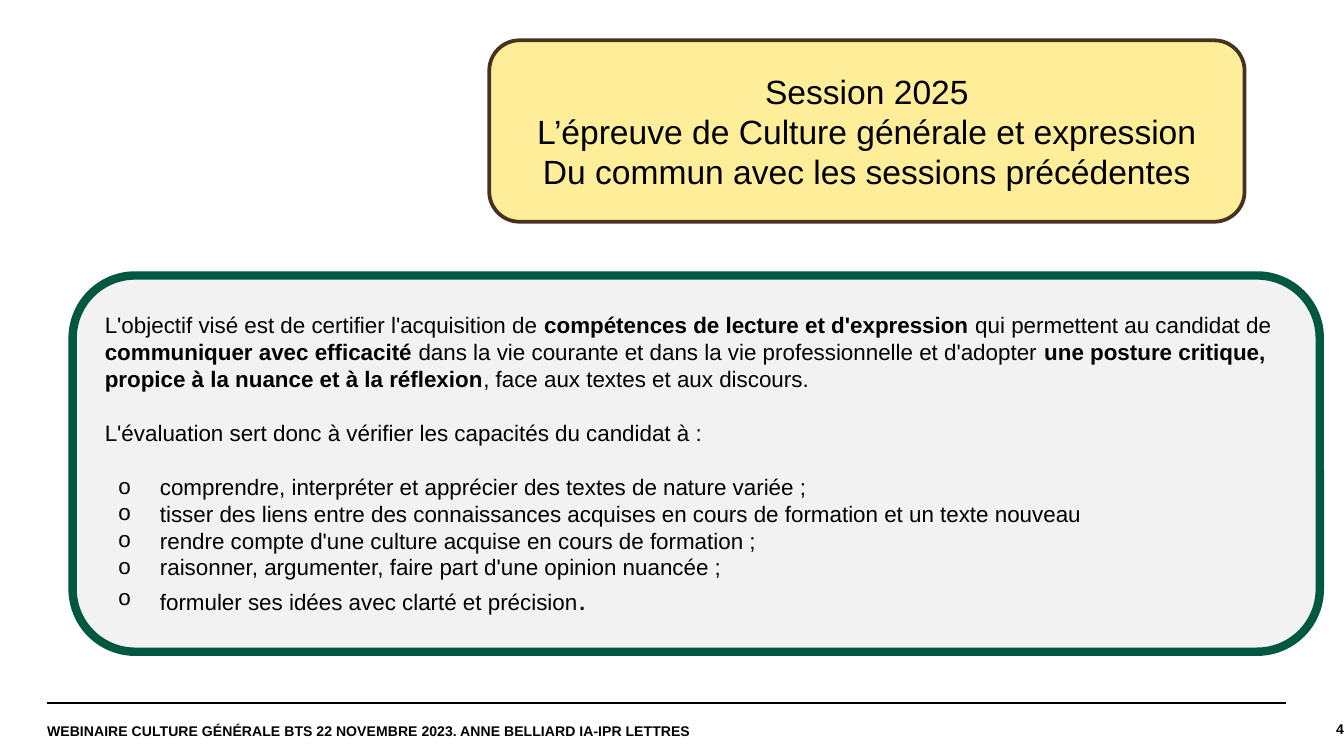
import pptx
import pptx.util
import pptx.dml.color
import pptx.enum.shapes
import pptx.enum.text
import pptx.oxml
import pptx.oxml.ns

Inches = pptx.util.Inches
Pt = pptx.util.Pt
ALIGN = pptx.enum.text.PP_ALIGN
ROUND_INSET = 0.05
GAP = 14.5

TITLE = ["Session 2025",
         "L’épreuve de Culture générale et expression Du commun avec les sessions précédentes"]
GOAL = [("L'objectif visé est de certifier l'acquisition de ", False),
        ("compétences de lecture et d'expression ", True),
        ("qui permettent au candidat de ", False),
        ("communiquer avec efficacité ", True),
        ("dans la vie courante et dans la vie professionnelle et d'adopter ", False),
        ("une posture critique, propice à la nuance et à la réflexion", True),
        (", face aux textes et aux discours.", False)]
INTRO = "L'évaluation sert donc à vérifier les capacités du candidat à :"
SKILLS = ["comprendre, interpréter et apprécier des textes de nature variée ;",
          "tisser des liens entre des connaissances acquises en cours de formation et un texte nouveau",
          "rendre compte d'une culture acquise en cours de formation ;",
          "raisonner, argumenter, faire part d'une opinion nuancée ;",
          "formuler ses idées avec clarté et précision"]
FOOTER = "WEBINAIRE CULTURE GÉNÉRALE BTS 22 NOVEMBRE 2023. ANNE BELLIARD IA-IPR LETTRES"


def color(value):
    return pptx.dml.color.RGBColor.from_string(value)


def add_run(p, text, size, bold=False):
    r = p.add_run()
    r.text = text
    r.font.name = "Arial"
    r.font.size = Pt(size)
    r.font.bold = bold
    r.font.color.rgb = color("000000")


def next_paragraph(tf, first, align=ALIGN.LEFT, before=0):
    p = tf.paragraphs[0] if first else tf.add_paragraph()
    p.alignment = align
    p.space_before = Pt(before)
    return p


def set_bullet(p, char=None):
    pPr = p._p.get_or_add_pPr()
    pPr.set("marL", str(Inches(0.41 if char else 0)))
    pPr.set("indent", str(Inches(-0.31 if char else 0)))
    ns = pptx.oxml.ns.nsdecls("a")
    if char:
        pPr.append(pptx.oxml.parse_xml(f'<a:buFont {ns} typeface="Arial"/>'))
        pPr.append(pptx.oxml.parse_xml(f'<a:buChar {ns} char="{char}"/>'))
    else:
        pPr.append(pptx.oxml.parse_xml(f"<a:buNone {ns}/>"))


def add_panel(s, ph, box, fill, line, width):
    x, y, w, h = box
    sp = s.shapes.add_shape(pptx.enum.shapes.MSO_SHAPE.ROUNDED_RECTANGLE,
                            *map(Inches, box))
    sp.shadow.inherit = False
    sp.fill.solid()
    sp.fill.fore_color.rgb = color(fill)
    sp.line.color.rgb = color(line)
    sp.line.width = Pt(width)
    s.shapes._spTree.append(ph._element)
    d = h * ROUND_INSET
    ph.left, ph.top = Inches(x + d), Inches(y + d)
    ph.width, ph.height = Inches(w - 2 * d), Inches(h - 2 * d)
    tf = ph.text_frame
    tf.word_wrap = True
    tf.auto_size = pptx.enum.text.MSO_AUTO_SIZE.NONE
    tf.vertical_anchor = pptx.enum.text.MSO_ANCHOR.MIDDLE
    return tf


def add_title(s, box):
    tf = add_panel(s, s.shapes.title, box, "FFEE99", "49311F", 2)
    for i, text in enumerate(TITLE):
        add_run(next_paragraph(tf, i == 0, ALIGN.CENTER), text, 18)


def add_body(s, box):
    tf = add_panel(s, s.placeholders[1], box, "F2F2F2", "005841", 4.5)
    p = next_paragraph(tf, True)
    set_bullet(p)
    for text, bold in GOAL:
        add_run(p, text, 12, bold)
    p = next_paragraph(tf, False, before=GAP)
    set_bullet(p)
    add_run(p, INTRO, 12)
    for i, text in enumerate(SKILLS):
        p = next_paragraph(tf, False, before=GAP if i == 0 else 0)
        set_bullet(p, "o")
        add_run(p, text, 12)
    add_run(p, ".", 16)


def add_label(s, box, text, align):
    tf = s.shapes.add_textbox(*map(Inches, box)).text_frame
    tf.word_wrap = True
    tf.vertical_anchor = pptx.enum.text.MSO_ANCHOR.MIDDLE
    tf.margin_left = tf.margin_right = tf.margin_top = tf.margin_bottom = 0
    add_run(next_paragraph(tf, True, align), text, 7.5, True)


def add_footer(s, box):
    x, y, w, h = box
    c = s.shapes.add_connector(pptx.enum.shapes.MSO_CONNECTOR.STRAIGHT,
                               Inches(x), Inches(y), Inches(x + 9.22), Inches(y))
    c.line.color.rgb = color("000000")
    c.line.width = Pt(0.8)
    c._element.spPr.append(pptx.oxml.parse_xml(
        f'<a:effectLst {pptx.oxml.ns.nsdecls("a")}/>'))
    add_label(s, (x, y + 0.02, 5.11, h - 0.01), FOOTER, ALIGN.LEFT)
    add_label(s, (x + w - 1.48, y, 1.48, h), "4", ALIGN.RIGHT)


def main():
    prs = pptx.Presentation()
    prs.slide_width, prs.slide_height = Inches(10), Inches(10 * 9 / 16)
    s = prs.slides.add_slide(prs.slide_layouts[1])
    add_footer(s, (0.35, 5.23, 9.65, 0.39))
    add_title(s, (3.64, 0.3, 5.62, 1.35))
    add_body(s, (0.54, 2.05, 9.28, 2.8))
    prs.save("out.pptx")


if __name__ == "__main__":
    main()
